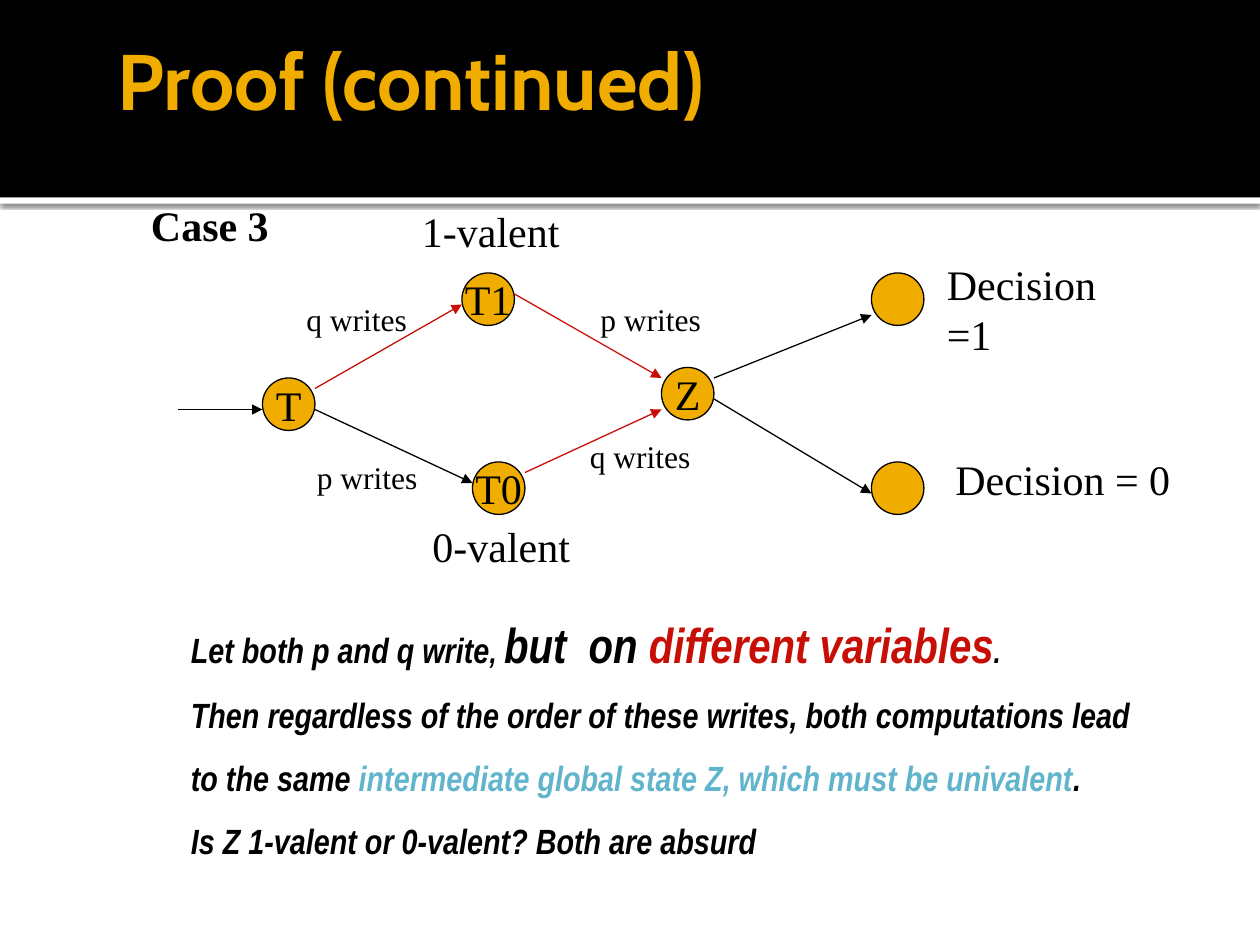
from lxml.etree import SubElement
from pptx import Presentation
from pptx.dml.color import RGBColor
from pptx.enum.shapes import MSO_CONNECTOR, MSO_SHAPE
from pptx.enum.text import MSO_ANCHOR, PP_ALIGN
from pptx.oxml.ns import qn
from pptx.util import Emu, Pt

PIXEL = 7620
BLACK, WHITE, GOLD, RED, BLUE = "000000", "FFFFFF", "F0AD00", "C70F05", "60B5CC"
SERIF, NARROW, HEADING = "Times New Roman", "Arial Narrow", "Cabin"
STATE_SIZE = 50

STATES = [
    ("T", 120, 180), ("T0", 320, 260), ("T1", 310, 80),
    ("Z", 500, 170), ("", 700, 80), ("", 700, 260),
]
ARROWS = [
    (40, 210, 120, 210, BLACK), (170, 190, 310, 110, RED),
    (170, 210, 320, 280, BLACK), (360, 100, 500, 180, RED),
    (370, 270, 500, 210, RED), (550, 180, 700, 120, BLACK),
    (550, 200, 700, 290, BLACK),
]
LABELS = [
    ("Case 3", 2, 4, 137, 24, True),
    ("1-valent", 260, 10, 155, 24, False),
    ("0-valent", 270, 310, 155, 24, False),
    ("Decision =1", 760, 60, 218, 24, False),
    ("Decision = 0", 768, 246, 229, 24, False),
    ("q writes", 150, 100, 120, 18, False),
    ("p writes", 160, 250, 120, 18, False),
    ("p writes", 430, 100, 120, 18, False),
    ("q writes", 420, 230, 120, 18, False),
]
STATEMENT = [
    [("Let both p and q write", 20, BLACK), (", ", 18, BLACK), ("but  on ", 28, BLACK),
     ("different variables", 28, RED), (".", 18, BLACK)],
    [("Then regardless of the order of these writes, both computations lead", 20, BLACK)],
    [("to the same ", 20, BLACK),
     ("intermediate global state Z, which must be univalent", 20, BLUE), (".", 20, BLACK)],
    [("Is Z 1-valent or 0-valent? Both are absurd", 20, BLACK)],
]


def px(*lengths):
    """Turn pixel lengths into EMU."""
    return [Emu(length * PIXEL) for length in lengths]


def color(hex_string):
    """Turn a hex string into a colour."""
    return RGBColor.from_string(hex_string)


def format_run(run, size, font_name, hex_string, bold=False, italic=False):
    """Set the font of one run."""
    font = run.font
    font.size, font.name = Pt(size), font_name
    font.bold, font.italic = bold, italic
    font.color.rgb = color(hex_string)


def add_filled_shape(slide, kind, box, fill, line=None):
    """Add a preset shape with a plain fill and an optional outline."""
    shape = slide.shapes.add_shape(kind, *px(*box))
    shape.shadow.inherit = False
    shape.fill.solid()
    shape.fill.fore_color.rgb = color(fill)
    if line:
        shape.line.color.rgb = color(line)
        shape.line.width = Pt(0.75)
    else:
        shape.line.fill.background()
    return shape


def add_shadow(shape):
    """Give a shape a soft shadow straight below it."""
    effects = shape._element.spPr.find(qn("a:effectLst"))
    shadow = SubElement(effects, qn("a:outerShdw"), blurRad=str(Pt(2.5)), dist=str(Pt(0.8)),
                        dir="5400000", algn="tl", rotWithShape="0")
    shade = SubElement(shadow, qn("a:srgbClr"), val=BLACK)
    SubElement(shade, qn("a:alpha"), val="60000")


def add_arrow(slide, start_x, start_y, end_x, end_y, hex_string):
    """Draw a thin straight arrow."""
    arrow = slide.shapes.add_connector(MSO_CONNECTOR.STRAIGHT, *px(start_x, start_y, end_x, end_y))
    arrow.line.color.rgb = color(hex_string)
    arrow.line.width = Pt(0.75)
    SubElement(arrow.line._get_or_add_ln(), qn("a:tailEnd"), type="triangle")
    SubElement(arrow._element.spPr, qn("a:effectLst"))


def add_text_box(slide, *box):
    """Add an empty text box that keeps its lines unbroken."""
    text_frame = slide.shapes.add_textbox(*px(*box)).text_frame
    text_frame.word_wrap = False
    return text_frame


def add_header(slide, left, top, width, height):
    """Place the dark band, its white edge and the title."""
    edge = add_filled_shape(slide, MSO_SHAPE.RECTANGLE, (left, top + height, width, 6), WHITE)
    add_shadow(edge)
    add_filled_shape(slide, MSO_SHAPE.RECTANGLE, (left, top, width, height), BLACK)
    title = slide.shapes.title
    slide.shapes._spTree.append(title._element)
    title.left, title.top, title.width, title.height = px(left + 100, top, 1020, 150)
    text_frame = title.text_frame
    text_frame.text = "Proof (continued)"
    text_frame.vertical_anchor = MSO_ANCHOR.MIDDLE
    text_frame.margin_right = px(6)[0]
    paragraph = text_frame.paragraphs[0]
    paragraph.alignment = PP_ALIGN.LEFT
    format_run(paragraph.runs[0], 45, HEADING, GOLD, bold=True)


def add_state(slide, name, left, top):
    """Draw one state as a circle with its name."""
    circle = add_filled_shape(slide, MSO_SHAPE.OVAL, (left, top, STATE_SIZE, STATE_SIZE), GOLD, BLACK)
    if name:
        text_frame = circle.text_frame
        text_frame.word_wrap = False
        text_frame.vertical_anchor = MSO_ANCHOR.MIDDLE
        text_frame.text = name
        paragraph = text_frame.paragraphs[0]
        paragraph.alignment = PP_ALIGN.CENTER
        format_run(paragraph.runs[0], 24, SERIF, BLACK)


def add_state_diagram(slide, left, top):
    """Draw the states, the transitions and their labels."""
    for name, x, y in STATES:
        add_state(slide, name, left + x, top + y)
    for start_x, start_y, end_x, end_y, hex_string in ARROWS:
        add_arrow(slide, left + start_x, top + start_y, left + end_x, top + end_y, hex_string)
    for text, x, y, width, size, bold in LABELS:
        text_frame = add_text_box(slide, left + x, top + y, width, 60 if size == 24 else 48)
        text_frame.text = text
        format_run(text_frame.paragraphs[0].runs[0], size, SERIF, BLACK, bold=bold)


def add_statement(slide, left, top, width, height):
    """Write the argument below the diagram."""
    text_frame = add_text_box(slide, left, top, width, height)
    for index, pieces in enumerate(STATEMENT):
        paragraph = text_frame.add_paragraph() if index else text_frame.paragraphs[0]
        paragraph.line_spacing = 1.5
        for text, size, hex_string in pieces:
            run = paragraph.add_run()
            run.text = text
            format_run(run, size, NARROW, hex_string, bold=True, italic=True)


def main():
    """Build the slide and save it."""
    presentation = Presentation()
    presentation.slide_width, presentation.slide_height = px(1200, 900)
    slide = presentation.slides.add_slide(presentation.slide_layouts[5])
    add_header(slide, 0, 0, 1200, 188)
    add_state_diagram(slide, 130, 180)
    add_statement(slide, 170, 551, 925, 317)
    presentation.save("out.pptx")


if __name__ == "__main__":
    main()
